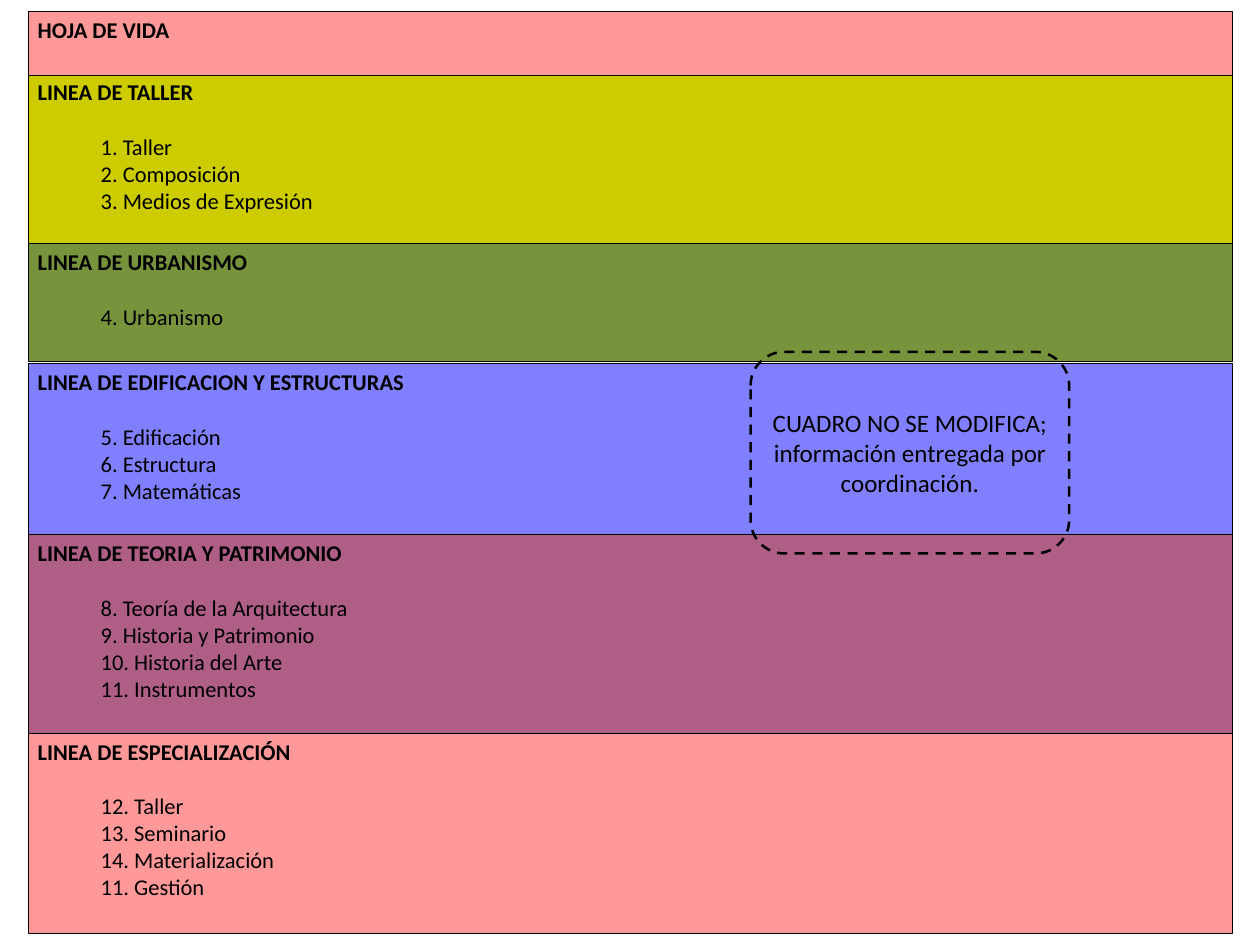
from pptx import Presentation
from pptx.dml.color import RGBColor
from pptx.enum.dml import MSO_LINE
from pptx.enum.shapes import MSO_SHAPE as SHAPE
from pptx.enum.text import MSO_ANCHOR as ANCHOR, PP_ALIGN as ALIGN
from pptx.util import Inches, Pt

COLORS = {
    "ink": "000000",
    "pink": "FF9999",
    "yellow": "CCCC00",
    "green": "77933C",
    "blue": "8080FF",
    "plum": "AF5E86",
}
BAND_LEFT, BAND_WIDTH = 0.32, 13.37

# top, height, colour, heading, subjects; from back to front
BANDS = [
    (0.82, 1.92, "yellow", "LINEA DE TALLER",
     ["1. Taller", "2. Composición", "3. Medios de Expresión"]),
    (2.71, 1.31, "green", "LINEA DE URBANISMO", ["4. Urbanismo"]),
    (4.04, 1.92, "blue", "LINEA DE EDIFICACION Y ESTRUCTURAS",
     ["5. Edificación", "6. Estructura", "7. Matemáticas"]),
    (5.94, 2.22, "plum", "LINEA DE TEORIA Y PATRIMONIO",
     ["8. Teoría de la Arquitectura", "9. Historia y Patrimonio",
      "10. Historia del Arte", "11. Instrumentos"]),
    (0.13, 0.71, "pink", "HOJA DE VIDA", []),
    (8.15, 2.22, "pink", "LINEA DE ESPECIALIZACIÓN",
     ["12. Taller", "13. Seminario", "14. Materialización", "11. Gestión"]),
]


def add_box(kind, left, top, width, height, line_width, anchor):
    """Add an outlined shape with empty wrapped text to the page."""
    box = page.shapes.add_shape(
        kind, Inches(left), Inches(top), Inches(width), Inches(height))
    box.shadow.inherit = False
    box.line.color.rgb = RGBColor.from_string(COLORS["ink"])
    box.line.width = Pt(line_width)
    box.text_frame.word_wrap = True
    box.text_frame.vertical_anchor = anchor
    return box


def write(para, text, align, **font_format):
    para.alignment = align
    span = para.add_run()
    span.text = text
    span.font.name = "Calibri"
    span.font.color.rgb = RGBColor.from_string(COLORS["ink"])
    for name, value in font_format.items():
        setattr(span.font, name, value)


deck = Presentation()
deck.slide_width, deck.slide_height = Inches(14), Inches(10.5)
page = deck.slides.add_slide(deck.slide_layouts[6])

for top, height, color, heading, subjects in BANDS:
    band = add_box(SHAPE.RECTANGLE, BAND_LEFT, top, BAND_WIDTH, height,
                   0.75, ANCHOR.TOP)
    band.fill.solid()
    band.fill.fore_color.rgb = RGBColor.from_string(COLORS[color])
    title = band.text_frame.paragraphs[0]
    write(title, heading, ALIGN.LEFT, size=Pt(18), bold=True)
    if subjects:
        title.space_after = Pt(22)
    for subject in subjects:
        para = band.text_frame.add_paragraph()
        para.level = 1
        # the left indent has no public property
        para._p.get_or_add_pPr().set("marL", str(Inches(0.7)))
        write(para, subject, ALIGN.LEFT, size=Pt(18), bold=False)

note = add_box(SHAPE.ROUNDED_RECTANGLE, 8.34, 3.91, 3.54, 2.24,
               2, ANCHOR.MIDDLE)
note.fill.background()
note.line.dash_style = MSO_LINE.DASH
write(note.text_frame.paragraphs[0],
      "CUADRO NO SE MODIFICA; información entregada por coordinación.",
      ALIGN.CENTER, size=Pt(20))

deck.save("out.pptx")
